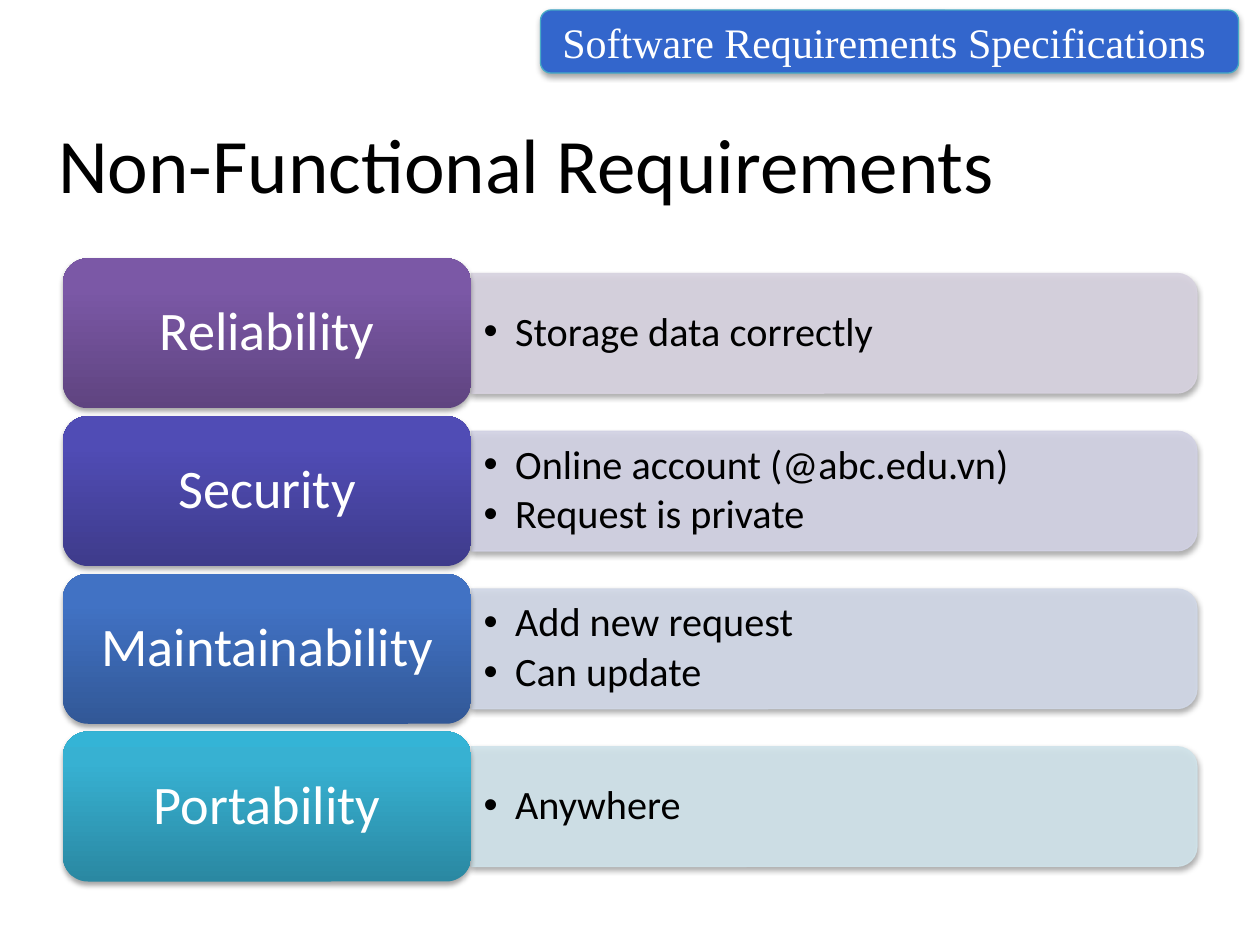
from copy import deepcopy

from lxml.etree import SubElement
from pptx import Presentation
from pptx.dml.color import RGBColor
from pptx.enum.shapes import MSO_SHAPE as Shape
from pptx.enum.text import MSO_ANCHOR as Anchor, PP_ALIGN as Align
from pptx.oxml.ns import qn
from pptx.util import Inches, Pt

BLACK = RGBColor(0x00, 0x00, 0x00)
WHITE = RGBColor(0xFF, 0xFF, 0xFF)
BANNER_FILL = RGBColor(0x33, 0x66, 0xCC)
BANNER_LINE = RGBColor(0x46, 0xAA, 0xC5)
PURPLE = [RGBColor.from_string(c) for c in ("5F4480", "7B58A6", "7C57A8", "D8D3E0")]
INDIGO = [RGBColor.from_string(c) for c in ("3E3B8B", "504CB5", "4F4BB8", "D2D2E4")]
BLUE = [RGBColor.from_string(c) for c in ("325897", "4172C4", "3F72C7", "D1D8E7")]
TEAL = [RGBColor.from_string(c) for c in ("2A88A2", "37B1D2", "34B4D6", "D0E3EA")]

TITLE = "Non-Functional Requirements "
BANNER = "Software Requirements Specifications "
REQUIREMENTS = [
    ("Reliability", ["Storage data correctly"], PURPLE),
    ("Security", ["Online account (@abc.edu.vn)", "Request is private"], INDIGO),
    ("Maintainability", ["Add new request", "Can update"], BLUE),
    ("Portability", ["Anywhere"], TEAL),
]

LEFT, TOP, PITCH = 0.5, 2.05, 1.252
LABEL_WIDTH, LABEL_HEIGHT = 3.24, 1.19
BAR_LENGTH, BAR_HEIGHT = 5.76, 0.95
STOPS = (0, 0.8, 1)


def write(para, text, size, color, font="Calibri"):
    span = para.add_run()
    span.text = text
    span.font.size = Pt(size)
    span.font.name = font
    span.font.color.rgb = color


def add_shadow(shape):
    shape.shadow.inherit = False
    effects = shape._element.spPr.find(qn("a:effectLst"))
    shadow = SubElement(effects, qn("a:outerShdw"), blurRad="40000", dist="23000",
                        dir="5400000", rotWithShape="0")
    color = SubElement(shadow, qn("a:srgbClr"), val="000000")
    SubElement(color, qn("a:alpha"), val="35000")


def add_block(page, kind, left, top, width, height):
    block = page.shapes.add_shape(kind, Inches(left), Inches(top), Inches(width), Inches(height))
    add_shadow(block)
    block.text_frame.vertical_anchor = Anchor.MIDDLE
    return block


def add_bar(page, middle, color):
    center = LEFT + LABEL_WIDTH + BAR_LENGTH / 2
    bar = add_block(page, Shape.ROUND_2_SAME_RECTANGLE, center - BAR_HEIGHT / 2,
                    middle - BAR_LENGTH / 2, BAR_HEIGHT, BAR_LENGTH)
    bar.rotation = 90
    bar.fill.solid()
    bar.fill.fore_color.rgb = color
    bar.line.color.rgb = color
    bar.line.width = Pt(0.75)
    for tone in bar._element.spPr.findall(".//" + qn("a:solidFill") + "/" + qn("a:srgbClr")):
        SubElement(tone, qn("a:alpha"), val="90000")


def add_details(page, middle, details):
    height = 0.86
    box = page.shapes.add_textbox(Inches(LEFT + LABEL_WIDTH), Inches(middle - height / 2),
                                  Inches(5.71), Inches(height))
    frame = box.text_frame
    frame.word_wrap = True
    frame.vertical_anchor = Anchor.MIDDLE
    for index, detail in enumerate(details):
        para = frame.paragraphs[0] if index == 0 else frame.add_paragraph()
        para.line_spacing = 0.9
        para.space_after = Pt(3.5)
        props = para._p.get_or_add_pPr()
        props.set("marL", str(Inches(0.25)))
        props.set("indent", str(-Inches(0.25)))
        SubElement(props, qn("a:buFont"), typeface="Arial")
        SubElement(props, qn("a:buChar"), char="•")
        write(para, detail, 23, BLACK)


def add_label(page, top, name, colors):
    label = add_block(page, Shape.ROUNDED_RECTANGLE, LEFT, top, LABEL_WIDTH, LABEL_HEIGHT)
    label.fill.gradient()
    label.fill.gradient_angle = 90
    stop_list = label._element.spPr.find(".//" + qn("a:gsLst"))
    stop_list.append(deepcopy(stop_list[-1]))
    for stop, position, color in zip(label.fill.gradient_stops, STOPS, colors):
        stop.position = position
        stop.color.rgb = color
    label.line.fill.background()
    para = label.text_frame.paragraphs[0]
    para.alignment = Align.CENTER
    para.line_spacing = 0.9
    write(para, name, 31, WHITE)


def add_title(page):
    title = page.shapes.title
    title.left, title.top = Inches(-0.25), Inches(0.67)
    title.width, title.height = Inches(9), Inches(1.25)
    title.text_frame.vertical_anchor = Anchor.MIDDLE
    para = title.text_frame.paragraphs[0]
    para.alignment = Align.CENTER
    write(para, TITLE, 44, BLACK)


def add_banner(page):
    banner = add_block(page, Shape.ROUNDED_RECTANGLE, 4.29, 0.08, 5.54, 0.5)
    banner.fill.solid()
    banner.fill.fore_color.rgb = BANNER_FILL
    banner.line.color.rgb = BANNER_LINE
    banner.line.width = Pt(0.75)
    para = banner.text_frame.paragraphs[0]
    para.alignment = Align.CENTER
    write(para, BANNER, 24, WHITE, "Times New Roman")


def main():
    deck = Presentation()
    deck.slide_width, deck.slide_height = Inches(10), Inches(7.5)
    page = deck.slides.add_slide(deck.slide_layouts[5])
    add_title(page)
    for row, (name, details, colors) in enumerate(REQUIREMENTS):
        top = TOP + row * PITCH
        middle = top + LABEL_HEIGHT / 2
        add_bar(page, middle, colors[-1])
        add_details(page, middle, details)
        add_label(page, top, name, colors)
    add_banner(page)
    deck.save("out.pptx")


if __name__ == "__main__":
    main()
